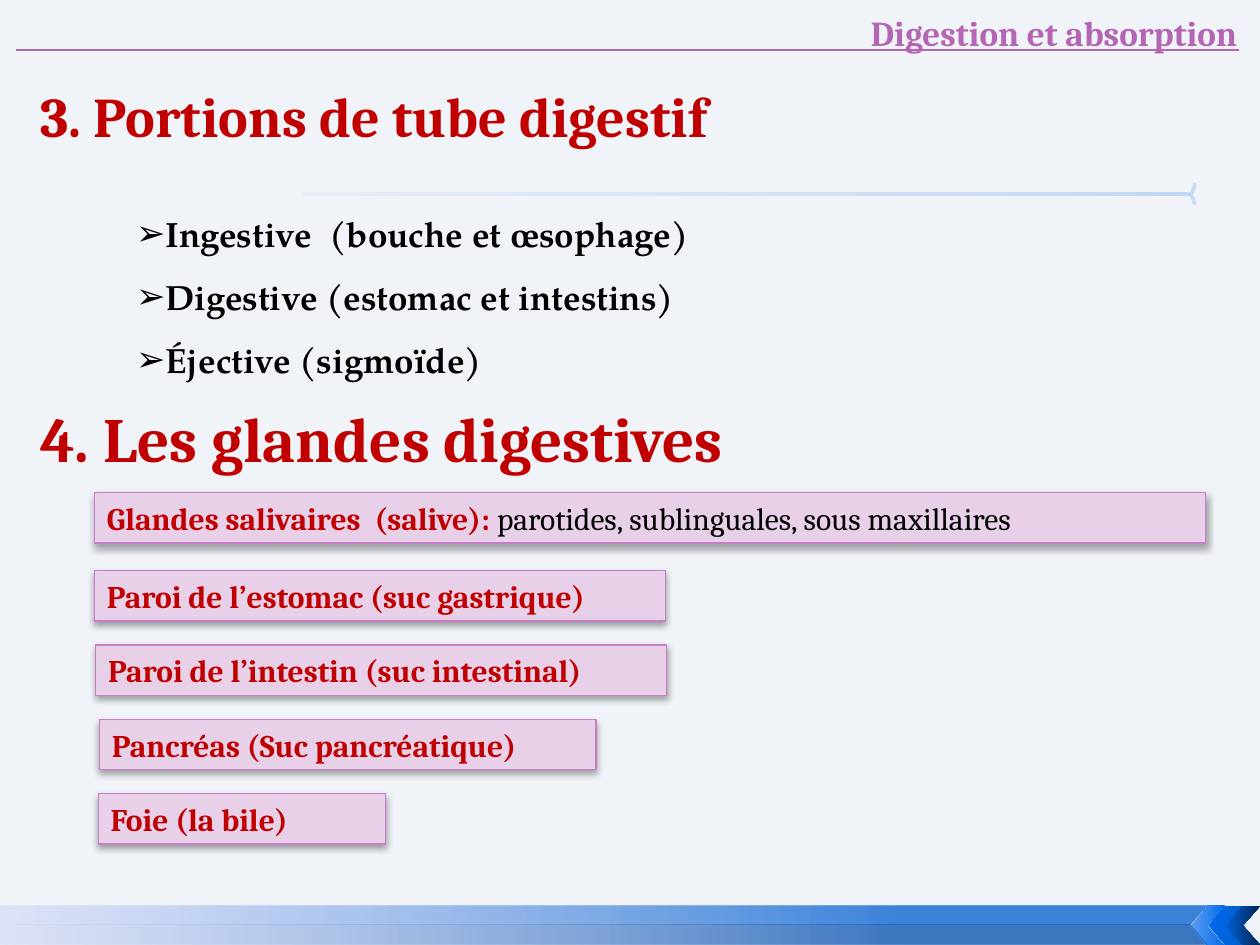
from typing import NamedTuple

from lxml.etree import SubElement
from pptx import Presentation
from pptx.dml.color import RGBColor
from pptx.enum.shapes import MSO_CONNECTOR, MSO_SHAPE
from pptx.enum.text import MSO_ANCHOR, MSO_AUTO_SIZE, PP_ALIGN
from pptx.oxml.ns import qn
from pptx.util import Inches, Pt

HEADING_FONT, LIST_FONT = "Cambria", "TeX Gyre Pagella"
RED, BLACK, MAUVE = "C00000", "000000", "B465B4"
BLUE, MID_BLUE, NAVY = "006AED", "005ED1", "002757"


class Stop(NamedTuple):
    position: int
    color: str
    opacity: int = 100


class Gland(NamedTuple):
    left: float
    top: float
    width: float
    name: str
    detail: str = ""


def rgb(color: str) -> RGBColor:
    return RGBColor.from_string(color)


def place(shape, left: float, top: float, width: float, height: float) -> None:
    shape.left, shape.top = Inches(left), Inches(top)
    shape.width, shape.height = Inches(width), Inches(height)


def style(font, name: str, size: float, color: str, bold: bool = True) -> None:
    font.name, font.size, font.bold = name, Pt(size), bold
    font.color.rgb = rgb(color)


def add_color(parent, color: str, opacity: int) -> None:
    srgb = SubElement(parent, qn("a:srgbClr"), val=color)
    SubElement(srgb, qn("a:alpha"), val=str(opacity * 1000))


def fade(shape, *stops: Stop) -> None:
    """Fill with a horizontal gradient, without outline or shadow."""
    shape.shadow.inherit = False
    shape.line.fill.background()
    shape.fill.gradient()
    shape.fill.gradient_angle = 180
    stop_list = shape.element.spPr.find(".//" + qn("a:gsLst"))
    for old in list(stop_list):
        stop_list.remove(old)
    for stop in stops:
        entry = SubElement(stop_list, qn("a:gs"), pos=str(stop.position * 1000))
        add_color(entry, stop.color, stop.opacity)


def add_ribbon(slide, corners: list[tuple[float, float]], color: str) -> None:
    points = [(Inches(x), Inches(y)) for x, y in corners]
    builder = slide.shapes.build_freeform(*points[0], scale=1)
    builder.add_line_segments(points[1:], close=True)
    fade(builder.convert_to_shape(), Stop(25, color, 75), Stop(100, "CCD4F8", 50))


def add_chevron(slide, box: tuple[float, float, float, float], *stops: Stop) -> None:
    chevron = slide.shapes.add_shape(MSO_SHAPE.CHEVRON, *map(Inches, box))
    chevron.element.spPr.xfrm.set("flipH", "1")
    fade(chevron, *stops)


def set_heading(shape, text: str, size: float) -> None:
    frame = shape.text_frame
    frame.text = text
    frame.word_wrap = True
    frame.auto_size = MSO_AUTO_SIZE.NONE
    frame.vertical_anchor = MSO_ANCHOR.TOP
    frame.paragraphs[0].alignment = PP_ALIGN.LEFT
    style(frame.paragraphs[0].runs[0].font, HEADING_FONT, size, RED)


def add_gland(slide, gland: Gland) -> None:
    box = slide.shapes.add_shape(
        MSO_SHAPE.RECTANGLE, *map(Inches, (gland.left, gland.top, gland.width, 0.4)))
    box.fill.solid()
    box.fill.fore_color.rgb = rgb("E8D1E8")
    box.line.color.rgb = rgb("C77CC7")
    box.line.width = Pt(0.75)
    box.shadow.inherit = False
    shadow = SubElement(box.element.spPr.find(qn("a:effectLst")), qn("a:outerShdw"),
                        blurRad=str(Pt(4)), dist=str(Pt(2)), dir="5400000", rotWithShape="0")
    add_color(shadow, BLACK, 35)

    box.text_frame.word_wrap = True
    box.text_frame.vertical_anchor = MSO_ANCHOR.TOP
    label = box.text_frame.paragraphs[0]
    label.text = gland.name
    label.alignment = PP_ALIGN.LEFT
    style(label.runs[0].font, HEADING_FONT, 18, RED)
    if gland.detail:
        detail = label.add_run()
        detail.text = gland.detail
        style(detail.font, HEADING_FONT, 18, BLACK, bold=False)


def fill_portions(body, portions: list[str]) -> None:
    frame = body.text_frame
    frame.text = "\n".join(portions)
    frame.auto_size = MSO_AUTO_SIZE.NONE
    for paragraph in frame.paragraphs:
        properties = paragraph._p.get_or_add_pPr()
        properties.set("marL", "0")
        properties.set("indent", "0")
        SubElement(properties, qn("a:buChar"), char="➢")
        paragraph.line_spacing = 1.5
        paragraph.space_before = Pt(0)
        style(paragraph.runs[0].font, LIST_FONT, 20, BLACK)


def add_header(slide, text: str) -> None:
    rule = slide.shapes.add_connector(
        MSO_CONNECTOR.STRAIGHT, Inches(0.13), Inches(0.4), Inches(9.83), Inches(0.4))
    rule.line.color.rgb = rgb(MAUVE)
    rule.line.width = Pt(1.25)
    SubElement(rule.element.spPr, qn("a:effectLst"))

    header = slide.shapes.add_textbox(*map(Inches, (4.92, 0.04, 5, 0.44)))
    frame = header.text_frame
    frame.text = text
    frame.word_wrap = True
    frame.vertical_anchor = MSO_ANCHOR.MIDDLE
    frame.paragraphs[0].alignment = PP_ALIGN.RIGHT
    font = frame.paragraphs[0].runs[0].font
    style(font, HEADING_FONT, 20, MAUVE)
    font.underline = True


def main() -> None:
    presentation = Presentation()
    presentation.slide_width, presentation.slide_height = Inches(10), Inches(7.5)
    slide = presentation.slides.add_slide(presentation.slide_layouts[1])
    slide.background.fill.solid()
    slide.background.fill.fore_color.rgb = rgb("F0F3F7")

    # Footer ribbons and chevrons
    add_ribbon(slide, [(9.58, 7.5), (0, 7.5), (0, 7.34), (9.44, 7.34)], "004EAF")
    add_ribbon(slide, [(9.58, 7.19), (0, 7.19), (0, 7.34), (9.44, 7.34)], MID_BLUE)
    chevron_fades = [
        (Stop(0, BLUE, 60), Stop(100, BLUE)),
        (Stop(0, BLUE), Stop(100, MID_BLUE)),
        (Stop(0, MID_BLUE), Stop(100, NAVY)),
    ]
    for index, stops in enumerate(chevron_fades):
        add_chevron(slide, (9.45 + 0.14 * index, 7.19, 0.27, 0.31), *stops)

    # Divider under the title
    add_chevron(slide, (9.44, 1.46, 0.06, 0.16), Stop(0, BLUE, 20), Stop(100, BLUE, 15))
    divider = slide.shapes.add_shape(
        MSO_SHAPE.RECTANGLE, *map(Inches, (2.41, 1.53, 7.03, 0.02)))
    fade(divider, Stop(0, BLUE, 20), Stop(100, BLUE, 4))

    # Portions of the digestive tract
    title, portions = slide.placeholders
    place(title, 0.22, 0.6, 6.9, 0.64)
    set_heading(title, "3. Portions de tube digestif", 32)
    place(portions, 0.98, 1.47, 5, 1.57)
    fill_portions(portions, [
        "Ingestive  (bouche et œsophage)",
        "Digestive (estomac et intestins)",
        "Éjective (sigmoïde)",
    ])

    # Digestive glands
    glands_heading = slide.shapes.add_textbox(*map(Inches, (0.22, 3.12, 5.83, 0.71)))
    set_heading(glands_heading, "4. Les glandes digestives", 36)
    for gland in (
        Gland(0.75, 3.91, 8.82, "Glandes salivaires  (salive): ",
              "parotides, sublinguales, sous maxillaires"),
        Gland(0.75, 4.53, 4.53, "Paroi de l’estomac (suc gastrique)"),
        Gland(0.76, 5.12, 4.53, "Paroi de l’intestin (suc intestinal)"),
        Gland(0.79, 5.71, 3.94, "Pancréas (Suc pancréatique)"),
        Gland(0.78, 6.3, 2.28, "Foie (la bile)"),
    ):
        add_gland(slide, gland)

    add_header(slide, "Digestion et absorption")
    presentation.save("out.pptx")


if __name__ == "__main__":
    main()
